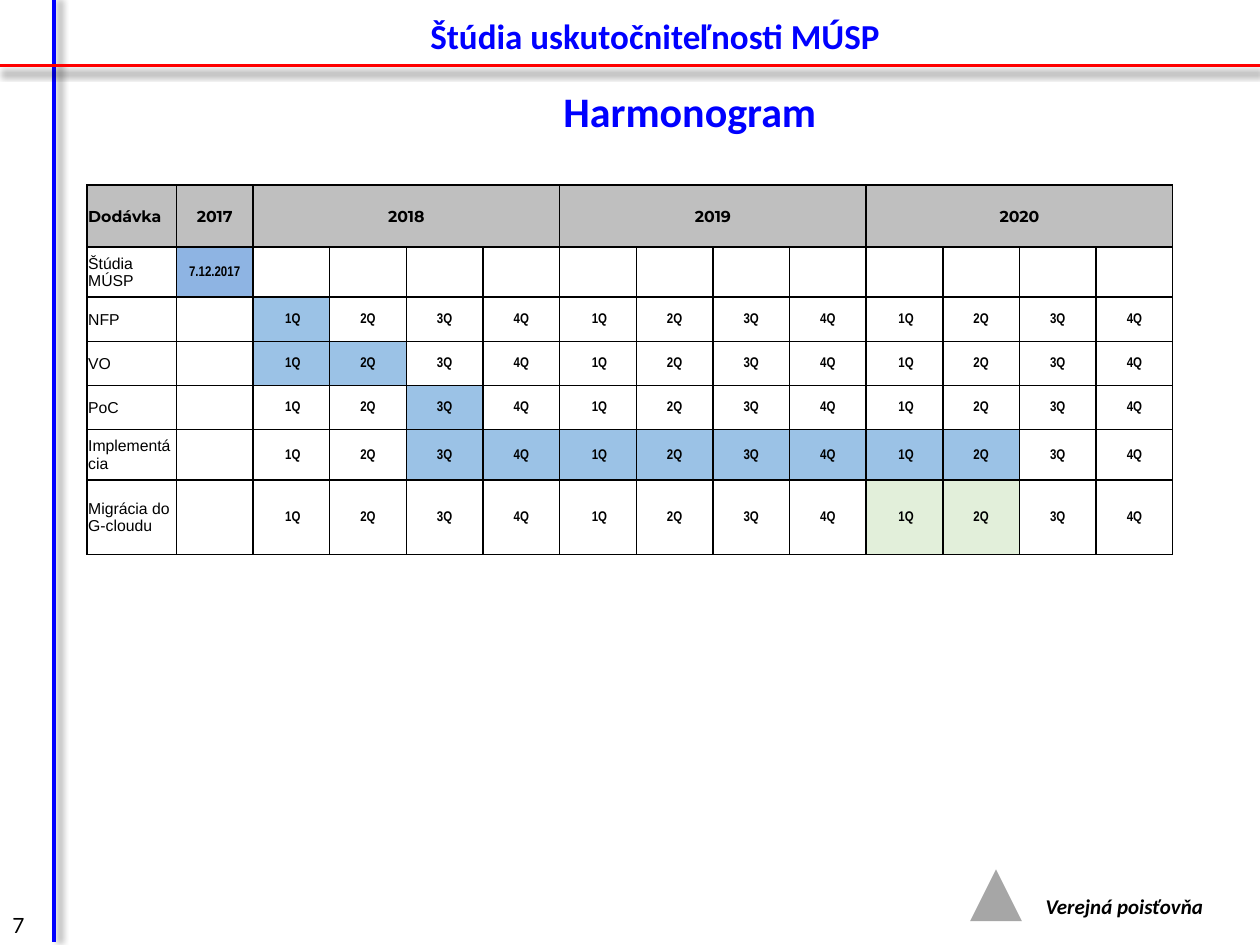
from lxml.etree import SubElement
from pptx import Presentation
from pptx.dml.color import RGBColor as RGB
from pptx.enum.shapes import MSO_CONNECTOR as CONN, MSO_SHAPE as SHAPE
from pptx.enum.text import MSO_ANCHOR as ANCHOR, PP_ALIGN as ALIGN
from pptx.oxml import parse_xml
from pptx.oxml.ns import nsdecls, qn
from pptx.util import Inches, Pt

COLORS = {
    "blue": "0000FF", "red": "FF0000", "black": "000000", "grey": "A6A6A6",
    "header": "BFBFBF", "study": "8EB4E3", "active": "9BC2E6", "cloud": "E2EFDA",
}

prs = Presentation()
prs.slide_width, prs.slide_height = Inches(10), Inches(7.5)
s = prs.slides.add_slide(prs.slide_layouts[6])
# All lengths below are percentages of the slide's width (X) and height (Y).
X, Y = prs.slide_width / 100, prs.slide_height / 100


def style_text(tf, text, size, font, color="black", bold=False, italic=False, align=ALIGN.LEFT):
    tf.text = text
    p = tf.paragraphs[0]
    p.alignment = align
    f = p.runs[0].font
    f.size, f.name, f.bold, f.italic = Pt(size), font, bold, italic
    f.color.rgb = RGB.from_string(COLORS[color])


def draw_borders(cell):
    """Give a cell thin black lines on its four sides; call before setting its fill."""
    tc_pr = cell._tc.get_or_add_tcPr()
    for side in ("a:lnL", "a:lnR", "a:lnT", "a:lnB"):
        ln = SubElement(tc_pr, qn(side), w=str(Pt(1)))
        SubElement(SubElement(ln, qn("a:solidFill")), qn("a:srgbClr"), val=COLORS["black"])


# Crossing rules with soft shadows: end point, colour, shadow distance and angle
for x1, y1, x2, y2, color, dist, angle in [
    (4.3, 0, 4.3, 99.73, "blue", 3, 0),
    (0, 6.93, 100, 6.93, "red", 4, 90),
]:
    rule = s.shapes.add_connector(
        CONN.STRAIGHT, int(x1 * X), int(y1 * Y), int(x2 * X), int(y2 * Y))
    rule.line.color.rgb = RGB.from_string(COLORS[color])
    rule.line.width = Pt(2)
    rule._element.spPr.append(parse_xml(
        f'<a:effectLst {nsdecls("a")}><a:outerShdw blurRad="{Pt(4)}" dist="{Pt(dist)}" '
        f'dir="{angle * 60000}" rotWithShape="0"><a:srgbClr val="{COLORS["black"]}">'
        '<a:alpha val="40000"/></a:srgbClr></a:outerShdw></a:effectLst>'))

# Plain emblem beside the organisation's name
emblem = s.shapes.add_shape(
    SHAPE.ISOSCELES_TRIANGLE, int(77 * X), int(92 * Y), int(4.1 * X), int(5.47 * Y))
emblem.shadow.inherit = False
emblem.fill.solid()
emblem.fill.fore_color.rgb = RGB.from_string(COLORS["grey"])
emblem.line.fill.background()

# Titles, slide number and organisation
title = dict(font="Calibri", color="blue", bold=True, align=ALIGN.CENTER)
for x, y, w, h, text, anchor, style in [
    (10.2, 0, 83.6, 7.47, "Štúdia uskutočniteľnosti MÚSP", ANCHOR.MIDDLE, dict(title, size=20)),
    (7.7, 8, 94.1, 7.47, "Harmonogram", ANCHOR.MIDDLE, dict(title, size=24)),
    (0, 95.87, 4.3, 4.13, "7", ANCHOR.TOP, dict(size=12, font="Lato")),
    (82, 93.87, 18, 4, "Verejná poisťovňa", ANCHOR.TOP,
     dict(size=12, font="Calibri", bold=True, italic=True)),
]:
    tf = s.shapes.add_textbox(int(x * X), int(y * Y), int(w * X), int(h * Y)).text_frame
    tf.word_wrap = True
    tf.vertical_anchor = anchor
    style_text(tf, text, **style)

# Schedule: a label column, the year 2017, then four quarters for each later year
YEARS = ["2018", "2019", "2020"]
QUARTERS = [" 1Q", "2Q", "3Q", "4Q"] * len(YEARS)
# Task, row height, first and last filled quarter (counted from 1), fill
TASKS = [
    ("NFP", 4.67, 1, 1, "active"),
    ("VO", 4.67, 1, 2, "active"),
    ("PoC", 4.67, 3, 3, "active"),
    ("Implementácia", 5.33, 3, 10, "active"),
    ("Migrácia do G-cloudu", 7.87, 9, 10, "cloud"),
]
heights = [6.53, 5.33] + [task[1] for task in TASKS]
TABLE_W, LABEL_W = 86.2, 7.1
n_cols = 2 + len(QUARTERS)
quarter_w = (TABLE_W - LABEL_W) / (n_cols - 1)

header = ["Dodávka", "2017"] + [""] * len(QUARTERS)
header[2::4] = YEARS
grid = [header, ["Štúdia MÚSP", "7.12.2017"] + [""] * len(QUARTERS)]
grid += [[task[0], ""] + QUARTERS for task in TASKS]
fills = {(0, c): "header" for c in range(n_cols)}
fills[1, 1] = "study"
for r, (_, _, first, last, color) in enumerate(TASKS, 2):
    fills.update({(r, q + 1): color for q in range(first, last + 1)})

table = s.shapes.add_table(len(grid), n_cols, int(6.9 * X), int(19.6 * Y),
                           int(TABLE_W * X), int(sum(heights) * Y)).table
table.first_row = table.horz_banding = False
for c, col in enumerate(table.columns):
    col.width = int((quarter_w if c else LABEL_W) * X)
for row, height in zip(table.rows, heights):
    row.height = int(height * Y)
for c in range(2, n_cols, 4):
    table.cell(0, c).merge(table.cell(0, c + 3))

for r, texts in enumerate(grid):
    for c, text in enumerate(texts):
        cell = table.cell(r, c)
        cell.margin_left = cell.margin_right = cell.margin_top = Inches(0.01)
        cell.margin_bottom = 0
        cell.vertical_anchor = ANCHOR.MIDDLE
        draw_borders(cell)
        if (r, c) in fills:
            cell.fill.solid()
            cell.fill.fore_color.rgb = RGB.from_string(COLORS[fills[r, c]])
        else:
            cell.fill.background()
        if text:
            font, size = ("Montserrat", 9) if r == 0 else ("Arial Narrow", 8) if c else ("Arial", 9)
            style_text(cell.text_frame, text, size, font, bold=r == 0 or c > 0,
                       align=ALIGN.CENTER if c else ALIGN.LEFT)

prs.save("out.pptx")
